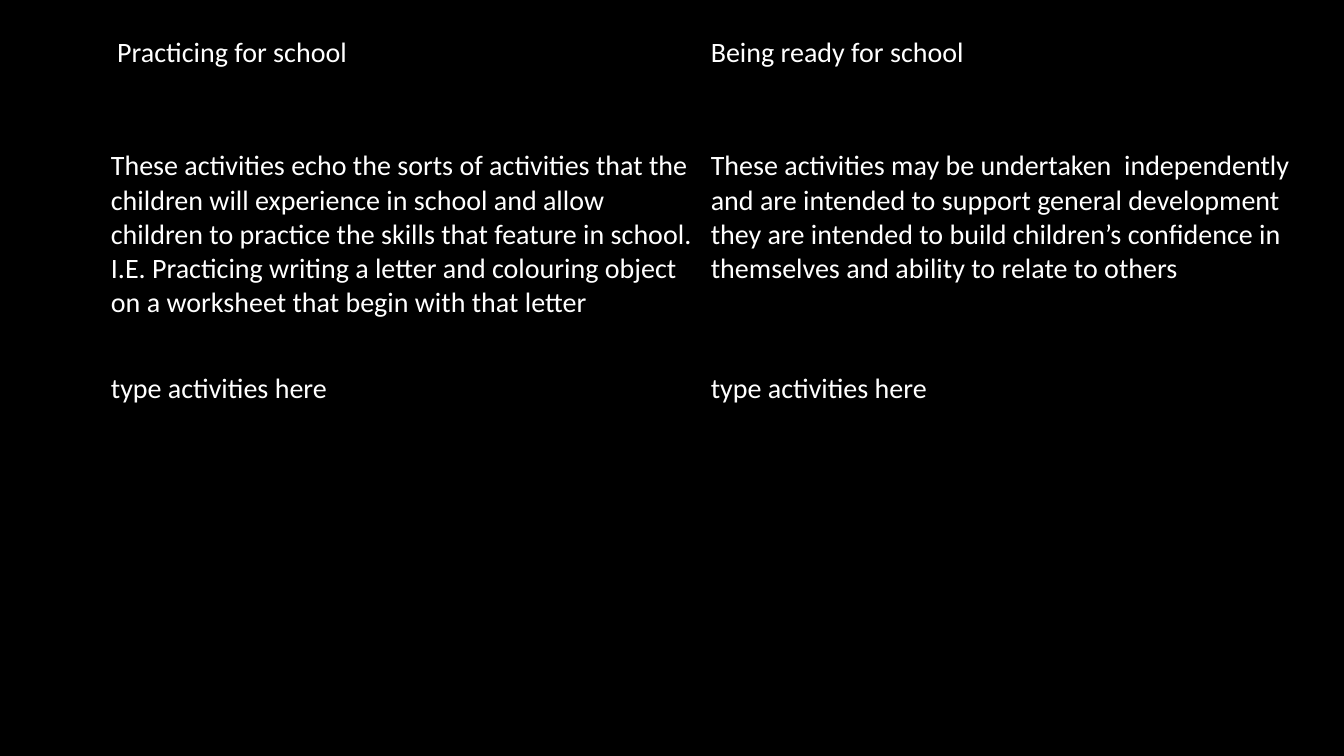
from lxml.etree import SubElement
from pptx import Presentation
from pptx.dml.color import RGBColor
from pptx.oxml.ns import qn
from pptx.util import Inches, Pt

BLACK = RGBColor(0x00, 0x00, 0x00)
WHITE = RGBColor(0xFF, 0xFF, 0xFF)

ROWS = [
    (
        [" Practicing for school"],
        ["Being ready for school"],
    ),
    (
        [
            "These activities echo the sorts of activities that the children will "
            "experience in school and allow children to practice the skills that "
            "feature in school.",
            "I.E. Practicing writing a letter and colouring object on a worksheet "
            "that begin with that letter",
        ],
        [
            "These activities may be undertaken  independently and are intended to "
            "support general development they are intended to build children’s "
            "confidence in themselves and ability to relate to others",
        ],
    ),
    (
        ["type activities here"],
        ["type activities here"],
    ),
]
ROW_HEIGHTS = [1.12, 2.21, 3.03]
COLUMN_WIDTH = 5.95
TABLE_LEFT, TABLE_TOP = 1.05, 0
SIDE_MARGIN, TOP_MARGIN, BOTTOM_MARGIN = 0.05, 0.36, 0.02


def add_borders(cell):
    """Draw a thin black line on every side of the cell."""
    properties = cell._tc.get_or_add_tcPr()
    for side in ("a:lnL", "a:lnR", "a:lnT", "a:lnB"):
        line = SubElement(properties, qn(side), w=str(Pt(0.5)))
        fill = SubElement(line, qn("a:solidFill"))
        SubElement(fill, qn("a:srgbClr"), val=str(BLACK))


def fill_cell(cell, texts):
    """Format one cell and write its paragraphs."""
    add_borders(cell)
    cell.fill.solid()
    cell.fill.fore_color.rgb = BLACK
    cell.margin_left = cell.margin_right = Inches(SIDE_MARGIN)
    cell.margin_top = Inches(TOP_MARGIN)
    cell.margin_bottom = Inches(BOTTOM_MARGIN)
    frame = cell.text_frame
    for index, text in enumerate(texts):
        paragraph = frame.add_paragraph() if index else frame.paragraphs[0]
        run = paragraph.add_run()
        run.text = text
        run.font.name = "Calibri"
        run.font.size = Pt(20)
        run.font.bold = False
        run.font.color.rgb = WHITE


def main():
    """Build the slide with its school activities table."""
    presentation = Presentation()
    presentation.slide_width = Inches(13.33)
    presentation.slide_height = Inches(7.5)
    slide = presentation.slides.add_slide(presentation.slide_layouts[6])
    slide.background.fill.solid()
    slide.background.fill.fore_color.rgb = BLACK

    column_count = len(ROWS[0])
    table = slide.shapes.add_table(
        len(ROWS), column_count, Inches(TABLE_LEFT), Inches(TABLE_TOP),
        Inches(COLUMN_WIDTH * column_count), Inches(sum(ROW_HEIGHTS)),
    ).table
    table.first_row = table.horz_banding = False
    for column in table.columns:
        column.width = Inches(COLUMN_WIDTH)
    for row, height, contents in zip(table.rows, ROW_HEIGHTS, ROWS):
        row.height = Inches(height)
        for cell, texts in zip(row.cells, contents):
            fill_cell(cell, texts)

    presentation.save("out.pptx")


if __name__ == "__main__":
    main()
